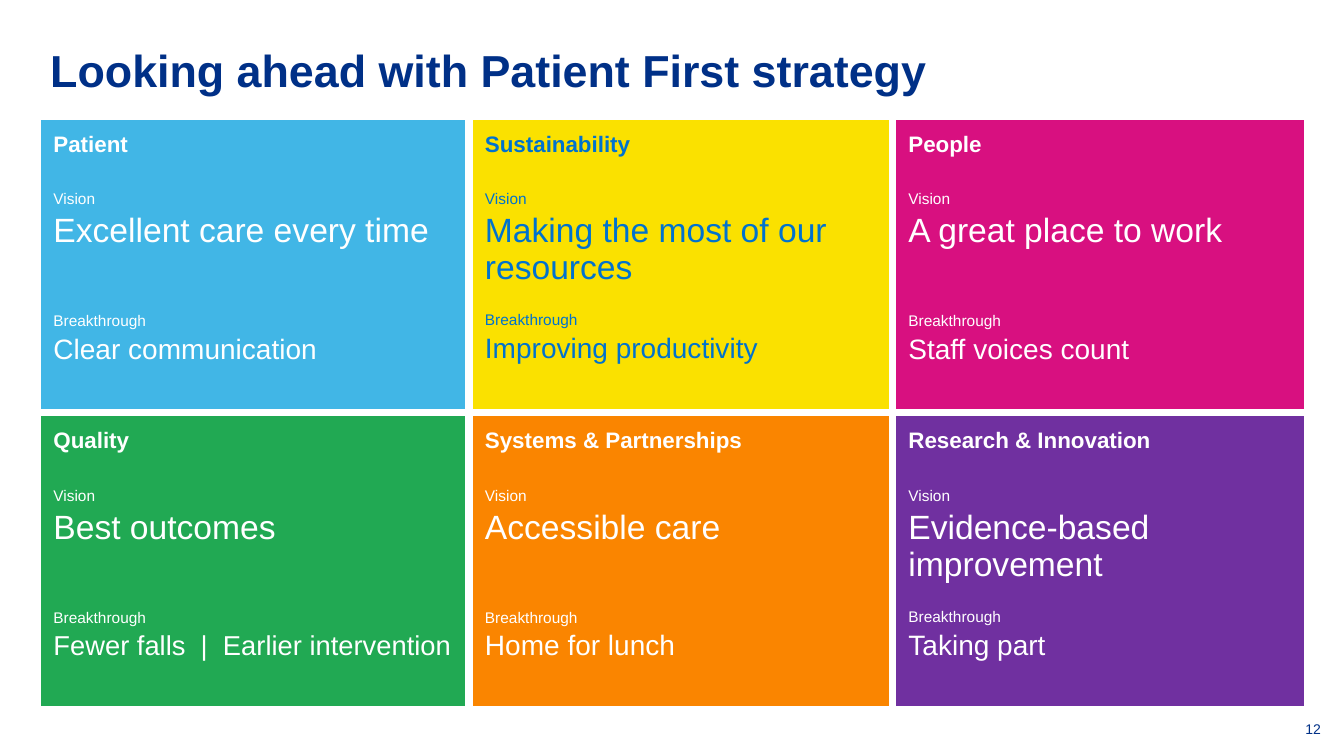
from lxml.etree import SubElement
from pptx import Presentation
from pptx.dml.color import RGBColor
from pptx.enum.text import MSO_ANCHOR as Anchor, PP_ALIGN as Align
from pptx.oxml.ns import qn
from pptx.util import Inches, Pt

FONT = "Arial"
COLORS = {
    "navy": "003087", "white": "FFFFFF", "blue": "0072CE", "sky": "41B6E6", "yellow": "FAE100",
    "pink": "D81080", "green": "21A953", "orange": "FA8500", "purple": "7030A0",
}
COLUMN_WIDTHS = [4.28, 4.2, 4.12]
ROW_HEIGHT = 2.82
BORDER_WIDTH = 6

THEMES = [
    [("Patient", "Excellent care every time", "Clear communication", "sky", "white", 45, 20),
     ("Sustainability", "Making the most of our resources", "Improving productivity", "yellow", "blue", 18, 20),
     ("People", "A great place to work", "Staff voices count", "pink", "white", 45, 20)],
    [("Quality", "Best outcomes", "Fewer falls  |  Earlier intervention", "green", "white", 45, 19.5),
     ("Systems & Partnerships", "Accessible care", "Home for lunch", "orange", "white", 45, 20),
     ("Research & Innovation", "Evidence-based improvement", "Taking part", "purple", "white", 18, 20)],
]


def style(paragraph, size, color, bold=False):
    for run in paragraph.runs:
        run.font.name = FONT
        run.font.size = Pt(size)
        run.font.bold = bold
        run.font.color.rgb = RGBColor.from_string(COLORS[color])


def add_label(left, top, width, height, text, size, bold, align, anchor):
    frame = slide.shapes.add_textbox(Inches(left), Inches(top), Inches(width), Inches(height)).text_frame
    frame.word_wrap = True
    frame.vertical_anchor = anchor
    frame.text = text
    frame.paragraphs[0].alignment = align
    style(frame.paragraphs[0], size, "navy", bold)


deck = Presentation()
deck.slide_width, deck.slide_height = Inches(13.33), Inches(7.5)
slide = deck.slides.add_slide(deck.slide_layouts[6])

add_label(0.4, 0.2, 9.47, 0.99, "Looking ahead with Patient First strategy", 32, True, Align.LEFT, Anchor.MIDDLE)
add_label(12.67, 7.1, 0.53, 0.4, "12", 10, False, Align.RIGHT, Anchor.TOP)

strategy = slide.shapes.add_table(
    len(THEMES), len(COLUMN_WIDTHS), Inches(0.37), Inches(1.15),
    Inches(sum(COLUMN_WIDTHS)), Inches(ROW_HEIGHT * len(THEMES))).table
strategy.first_row = strategy.horz_banding = False
for column, width in zip(strategy.columns, COLUMN_WIDTHS):
    column.width = Inches(width)

for row_index, theme_row in enumerate(THEMES):
    strategy.rows[row_index].height = Inches(ROW_HEIGHT)
    for column_index, theme in enumerate(theme_row):
        name, vision, breakthrough, fill, ink, vision_gap, breakthrough_size = theme
        cell = strategy.cell(row_index, column_index)
        cell.margin_left = cell.margin_top = Inches(0.16)
        cell.margin_right, cell.margin_bottom = Inches(0.1), Inches(0.35)
        cell.vertical_anchor = Anchor.TOP

        properties = cell._tc.get_or_add_tcPr()
        for side in ("a:lnL", "a:lnR", "a:lnT", "a:lnB"):
            border = SubElement(properties, qn(side), w=str(Pt(BORDER_WIDTH)))
            border_fill = SubElement(border, qn("a:solidFill"))
            SubElement(border_fill, qn("a:srgbClr"), val=COLORS["white"])
        cell.fill.solid()
        cell.fill.fore_color.rgb = RGBColor.from_string(COLORS[fill])

        lines = [
            (name, 16, 24), ("Vision", 11, 3), (vision, 24, vision_gap),
            ("Breakthrough", 11, 3), (breakthrough, breakthrough_size, 12),
        ]
        cell.text_frame.text = "\n".join(text for text, size, gap in lines)
        for paragraph, (text, size, gap) in zip(cell.text_frame.paragraphs, lines):
            paragraph.space_after = Pt(gap)
            style(paragraph, size, ink, bold=text == name)

deck.save("out.pptx")
